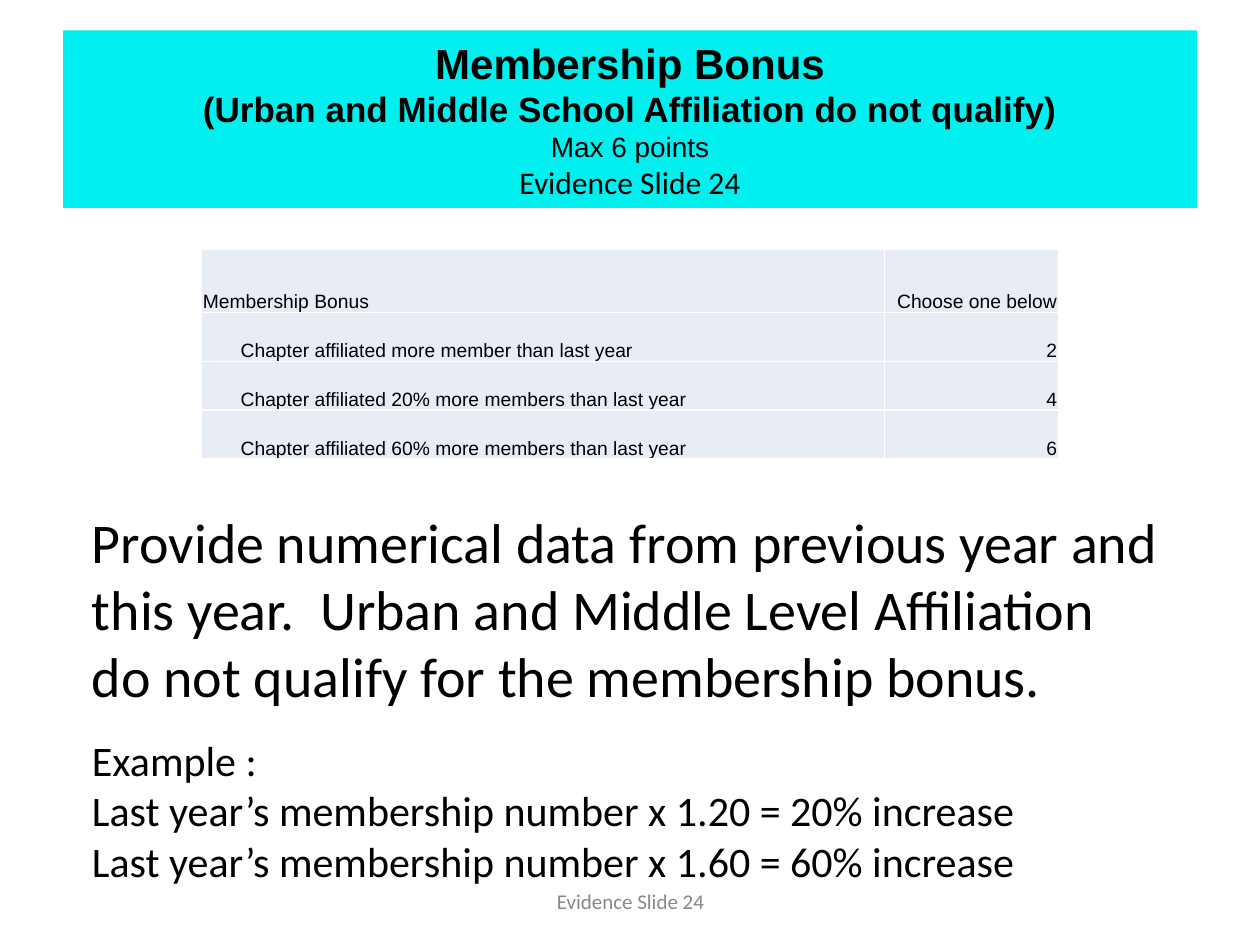
from pptx import Presentation
from pptx.dml.color import RGBColor
from pptx.enum.text import MSO_ANCHOR as Anchor, MSO_AUTO_SIZE as AutoSize, PP_ALIGN as Align
from pptx.oxml import parse_xml
from pptx.oxml.ns import nsdecls
from pptx.util import Inches, Pt

SLIDE_W, SLIDE_H = Inches(10), Inches(7.5)
BANNER, CELL, INK, GREY = "00F0F0", "E8ECF4", "000000", "888888"

BANNER_LINES = [  # text, size, font, bold
    ("Membership Bonus", 24, "Arial", True),
    ("(Urban and Middle School Affiliation do not qualify)", 20, "Arial", True),
    ("Max 6 points", 16, "Arial", False),
    ("Evidence Slide 24", 18, "Calibri", False),
]
BONUS_ROWS = [
    ("Membership Bonus", "Choose one below"),
    ("Chapter affiliated more member than last year", "2"),
    ("Chapter affiliated 20% more members than last year", "4"),
    ("Chapter affiliated 60% more members than last year", "6"),
]
GUIDANCE = [  # text, size, space before
    ("Provide numerical data from previous year and this year.  "
     "Urban and Middle Level Affiliation do not qualify for the membership bonus.", 32, 0),
    ("Example :", 24, 14.6),
    ("Last year’s membership number x 1.20 = 20% increase", 24, 0),
    ("Last year’s membership number x 1.60 = 60% increase", 24, 0),
]


def colour(hex_value):
    return RGBColor.from_string(hex_value)


def share(left, top, width, height):
    """Turn shares of the slide's size into a box."""
    return (int(left * SLIDE_W), int(top * SLIDE_H),
            int(width * SLIDE_W), int(height * SLIDE_H))


def place(shape, box):
    shape.left, shape.top, shape.width, shape.height = box


def style(paragraph, size, font="Calibri", bold=False, ink=INK, align=Align.LEFT, before=0):
    paragraph.alignment = align
    paragraph.space_before = Pt(before)
    for run in paragraph.runs:
        run.font.size, run.font.name, run.font.bold = Pt(size), font, bold
        run.font.color.rgb = colour(ink)


def add_banner(slide, box):
    banner = slide.shapes.title
    place(banner, box)
    banner.fill.solid()
    banner.fill.fore_color.rgb = colour(BANNER)
    frame = banner.text_frame
    frame.text = "\n".join(line[0] for line in BANNER_LINES)
    frame.auto_size, frame.vertical_anchor = AutoSize.NONE, Anchor.MIDDLE
    for paragraph, (_, size, font, bold) in zip(frame.paragraphs, BANNER_LINES):
        style(paragraph, size, font, bold, align=Align.CENTER)


def add_bonus_table(slide, box):
    bonus = slide.shapes.add_table(len(BONUS_ROWS), 2, *box).table
    bonus.first_row = bonus.horz_banding = False
    # The label column takes four fifths, the header row three tenths
    for column, part in zip(bonus.columns, (0.797, 0.203)):
        column.width = int(box[2] * part)
    for row, part in zip(bonus.rows, (0.3, *[0.7 / 3] * 3)):
        row.height = int(box[3] * part)
    for r, texts in enumerate(BONUS_ROWS):
        for c, text in enumerate(texts):
            cell = bonus.cell(r, c)
            cell.text = text
            cell.fill.solid()
            cell.fill.fore_color.rgb = colour(CELL)
            cell.vertical_anchor = Anchor.BOTTOM
            cell.margin_left = Inches(0.31 if r and not c else 0.01)
            cell.margin_right = cell.margin_top = Inches(0.01)
            cell.margin_bottom = 0
            style(cell.text_frame.paragraphs[0], 11, "Arial",
                  align=Align.RIGHT if c else Align.LEFT)


def add_guidance(slide, box):
    guidance = slide.placeholders[1]
    place(guidance, box)
    frame = guidance.text_frame
    frame.text = "\n".join(line[0] for line in GUIDANCE)
    frame.auto_size = AutoSize.NONE
    for paragraph, (_, size, before) in zip(frame.paragraphs, GUIDANCE):
        style(paragraph, size, before=before)
        # Plain text: no bullet, no hanging indent
        properties = paragraph._p.get_or_add_pPr()
        properties.set("marL", "0")
        properties.set("indent", "0")
        properties.append(parse_xml(f"<a:buNone {nsdecls('a')}/>"))


def add_footer(slide, box):
    frame = slide.shapes.add_textbox(*box).text_frame
    frame.text = "Evidence Slide 24"
    frame.word_wrap, frame.vertical_anchor = True, Anchor.MIDDLE
    style(frame.paragraphs[0], 12, ink=GREY, align=Align.CENTER)


def main():
    deck = Presentation()
    deck.slide_width, deck.slide_height = SLIDE_W, SLIDE_H
    slide = deck.slides.add_slide(deck.slide_layouts[1])
    add_banner(slide, share(0.05, 0.032, 0.9, 0.188))
    add_bonus_table(slide, share(0.16, 0.264, 0.68, 0.222))
    add_guidance(slide, share(0.063, 0.53, 0.873, 0.39))
    add_footer(slide, share(0.342, 0.927, 0.317, 0.053))
    deck.save("out.pptx")


if __name__ == "__main__":
    main()
